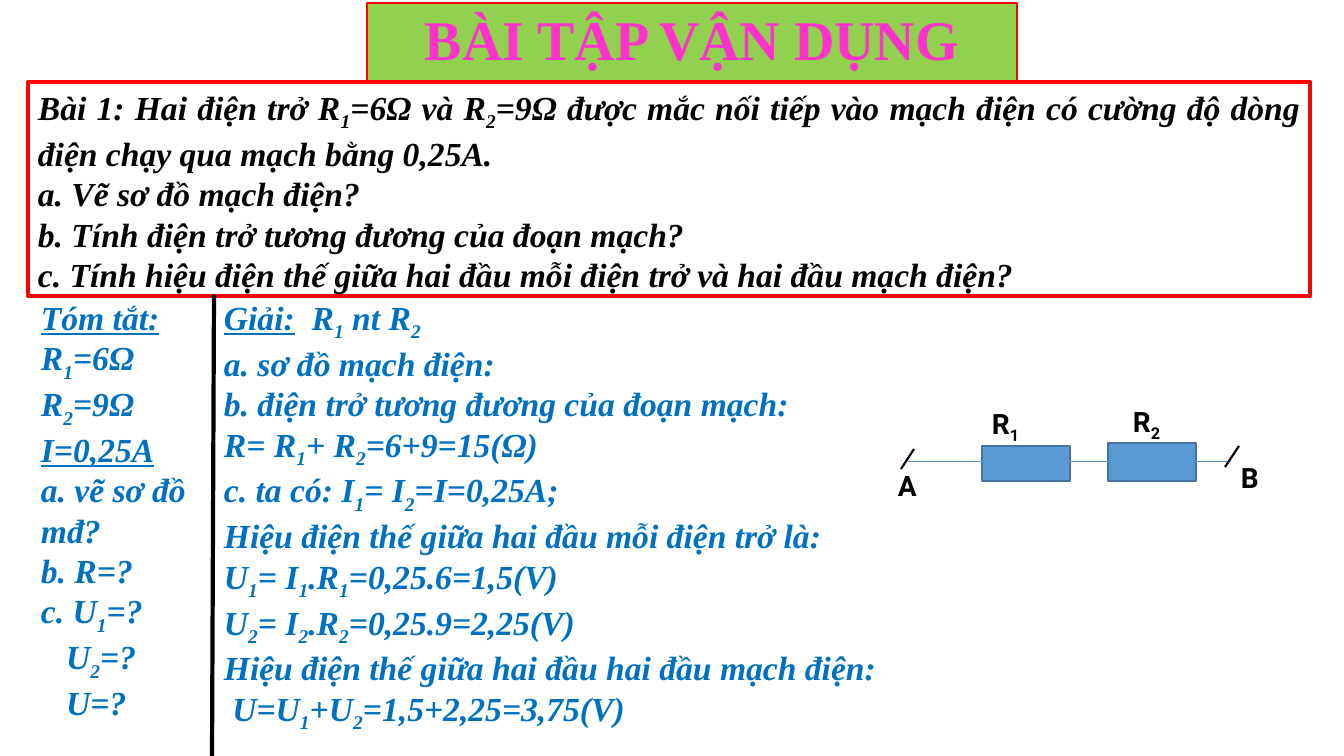
from pptx import Presentation, util as u
from pptx.dml.color import RGBColor
from pptx.enum import shapes, text
from pptx.oxml.ns import qn
from lxml import etree

PX = 914400 / 100.8
COLORS = {"title": "FF33CC", "green": "92D050", "red": "FF0000", "black": "000000",
          "blue": "0070C0", "white": "FFFFFF", "resistor": "5B9BD5", "edge": "43739E"}
SERIF = {"name": "Times New Roman", "size": u.Pt(24), "bold": True, "italic": True}
LABEL = {"name": "Roboto", "size": u.Pt(20), "bold": True}

prs = Presentation()
prs.slide_width, prs.slide_height = u.Inches(13.333), u.Inches(7.5)
s = prs.slides.add_slide(prs.slide_layouts[6])


def add_box(box, fill=None, line=None, width=0, lines=(), font=SERIF, color="black"):
    box = [u.Emu(round(v * PX)) for v in box]
    if line:
        sp = s.shapes.add_shape(shapes.MSO_SHAPE.RECTANGLE, *box)
        sp.shadow.inherit = False
        sp.line.color.rgb = RGBColor.from_string(COLORS[line])
        sp.line.width = u.Pt(width)
        if fill:
            sp.fill.solid()
            sp.fill.fore_color.rgb = RGBColor.from_string(COLORS[fill])
        else:
            sp.fill.background()
    else:
        sp = s.shapes.add_textbox(*box)
    tf = sp.text_frame
    tf.word_wrap = True
    tf.vertical_anchor = text.MSO_ANCHOR.TOP
    for i, content in enumerate(lines):
        p = tf.add_paragraph() if i else tf.paragraphs[0]
        p.alignment = text.PP_ALIGN.LEFT
        underlined, _, rest = content.rpartition("|")
        head, *tails = rest.split("_")
        pieces = [(underlined, True, False), (head, False, False)]
        for tail in tails:
            pieces += [(tail[0], False, True), (tail[1:], False, False)]
        for piece, underline, subscript in pieces:
            if not piece:
                continue
            r = p.add_run()
            r.text = piece
            for key, value in font.items():
                setattr(r.font, key, value)
            r.font.color.rgb = RGBColor.from_string(COLORS[color])
            if underline:
                r.font.underline = True
            if subscript:
                r.font._element.set("baseline", "-25000")
    return sp


def add_line(x1, y1, x2, y2, color, width):
    ln = s.shapes.add_connector(shapes.MSO_CONNECTOR.STRAIGHT,
                                *[u.Emu(round(v * PX)) for v in (x1, y1, x2, y2)])
    ln.line.color.rgb = RGBColor.from_string(COLORS[color])
    ln.line.width = u.Pt(width)
    etree.SubElement(ln._element.spPr, qn("a:effectLst"))


title = add_box((367, 3, 650, 79), "green", "red", 0.75, ["BÀI TẬP VẬN DỤNG"],
                {"name": "Times New Roman", "size": u.Pt(40), "bold": True}, "title")
title.text_frame.vertical_anchor = text.MSO_ANCHOR.MIDDLE
title.text_frame.paragraphs[0].alignment = text.PP_ALIGN.CENTER
title.text_frame.paragraphs[0].line_spacing = 0.9

problem = add_box((28, 82, 1282, 214), None, "red", 3, [
    "Bài 1: Hai điện trở R_1=6Ω và R_2=9Ω được mắc nối tiếp vào mạch điện "
    "có cường độ dòng điện chạy qua mạch bằng 0,25A.",
    "a. Vẽ sơ đồ mạch điện?",
    "b. Tính điện trở tương đương của đoạn mạch?",
    "c. Tính hiệu điện thế giữa hai đầu mỗi điện trở và hai đầu mạch điện?"])
for p in problem.text_frame.paragraphs:
    p.alignment = text.PP_ALIGN.JUSTIFY

summary = add_box((31, 292, 201, 417), color="blue", lines=[
    "Tóm tắt:|", "R_1=6Ω", "R_2=9Ω", "I=0,25A|", "a. vẽ sơ đồ mđ?",
    "b. R=?", "c. U_1=?", "U_2=?", "U=?"])
for p in summary.text_frame.paragraphs[-2:]:
    p._p.get_or_add_pPr().set("marL", str(u.Pt(18)))

add_line(212, 756, 214, 295, "black", 3)

solution = add_box((214, 292, 672, 417), color="blue", lines=[
    "Giải:|  R_1 nt R_2",
    "a. sơ đồ mạch điện:",
    "b. điện trở tương đương của đoạn mạch:",
    "R= R_1+ R_2=6+9=15(Ω)",
    "c. ta có: I_1= I_2=I=0,25A;",
    "Hiệu điện thế giữa hai đầu mỗi điện trở là:",
    "U_1= I_1.R_1=0,25.6=1,5(V)",
    "U_2= I_2.R_2=0,25.9=2,25(V)",
    "Hiệu điện thế giữa hai đầu hai đầu mạch điện:",
    " U=U_1+U_2=1,5+2,25=3,75(V)"])
for sp in (problem, summary, solution):
    sp.text_frame.auto_size = text.MSO_AUTO_SIZE.SHAPE_TO_FIT_TEXT

for name, x, y in (("R_2", 1123, 400), ("R_1", 982, 402)):
    add_box((x, y, 124, 92), "white", "white", 0.5, [name], LABEL)
for resistor in ((982, 446, 88, 35), (1108, 443, 88, 38)):
    add_box(resistor, "resistor", "edge", 1)
add_line(908, 461, 1239, 461, "resistor", 0.5)
for name, x, y in (("A", 888, 464), ("B", 1231, 456)):
    add_box((x, y, 38, 92), "white", "white", 0.5, [name], LABEL)
for terminal in ((1239, 446, 1225, 467), (914, 449, 901, 469)):
    add_line(*terminal, "black", 1.5)

prs.save("out.pptx")
